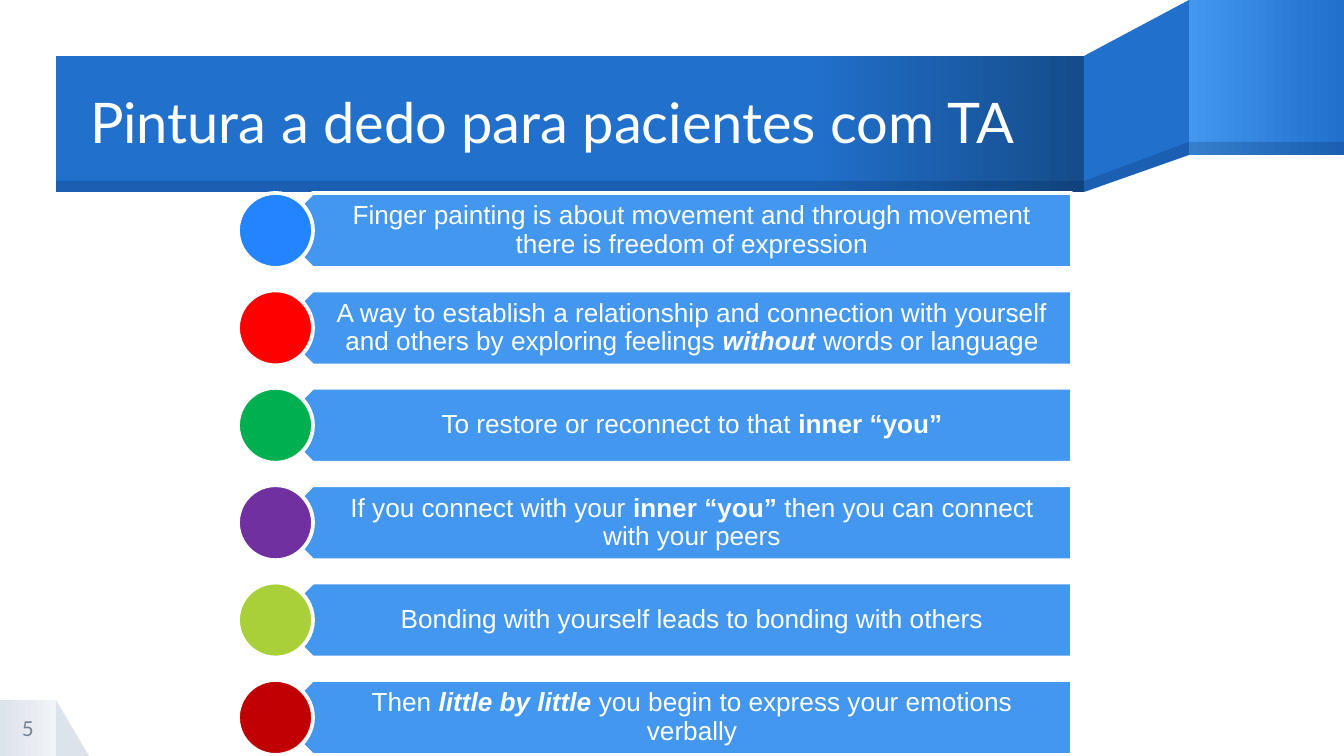
"""Build the finger painting slide: ribbon title, six colour-dotted rows, page number."""
from lxml import etree
from pptx import Presentation
from pptx import util as u
from pptx.dml.color import RGBColor
from pptx.enum import shapes, text
from pptx.oxml.ns import qn

PX = 914400 / 134.4
KIND = shapes.MSO_SHAPE
MID, LEFT = text.PP_ALIGN.CENTER, text.PP_ALIGN.LEFT
WHITE, BLUE, SKY, SHADE = "FFFFFF", "2170CC", "4397EE", "001F46"
BOLD = {"bold": True}
BOTH = {"bold": True, "italic": True}

TITLE = "Pintura a dedo para pacientes com TA"
ROWS = [
    ("2384FF", [("Finger painting is about movement and through movement there is freedom of expression", {})]),
    ("FF0000", [("A way to establish a relationship and connection with yourself and others by exploring feelings ", {}),
                ("without", BOTH), (" words or language", {})]),
    ("00B050", [("To restore or reconnect to that ", {}), ("inner “you”", BOLD)]),
    ("7030A0", [("If you connect with your ", {}), ("inner “you” ", BOLD),
                ("then you can connect with your peers", {})]),
    ("A9D039", [("Bonding with yourself leads to bonding with others", {})]),
    ("C00000", [("Then ", {}), ("little by little ", BOTH),
                ("you begin to express your emotions verbally", {})]),
]
PANELS = [
    (KIND.RIGHT_TRIANGLE, (56, 700, 33, 56), "DDE3EB"),
    (KIND.RECTANGLE, (0, 700, 56, 56), [(0, "DDE3EB"), (1, "F0F3F7")]),
    (KIND.RECTANGLE, (1189, 0, 155, 155), [(0, SKY), (1, BLUE)]),
    (KIND.RECTANGLE, (56, 56, 1028, 136), [(0.73, BLUE), (1, "154C8A")]),
]
FOLD = [(1189, 0), (1084, 56), (1084, 192), (1189, 155)]
EDGE = [(1189, 142), (1084, 181), (1084, 192), (1189, 155)]
STRIPS = [(1189, 142, 155, 13), (56, 181, 1028, 11)]
TOP, STEP, HIGH = 193, 97.4, 75


def emu(*vals):
    return [u.Emu(round(v * PX)) for v in vals]


def tint(code):
    return RGBColor.from_string(code)


def paint(shape, fill, edge=None, alpha=None):
    shape.shadow.inherit = False
    if isinstance(fill, list):
        shape.fill.gradient()
        shape.fill.gradient_angle = 0
        for stop, (pos, code) in zip(shape.fill.gradient_stops, fill):
            stop.position, stop.color.rgb = pos, tint(code)
    else:
        shape.fill.solid()
        shape.fill.fore_color.rgb = tint(fill)
    if alpha:
        color = shape._element.spPr.find(qn("a:solidFill"))[0]
        etree.SubElement(color, qn("a:alpha")).set("val", str(alpha * 1000))
    if edge:
        shape.line.color.rgb, shape.line.width = tint(edge), u.Pt(2)
    else:
        shape.line.fill.background()
    return shape


def draw(slide, kind, box, fill, **look):
    return paint(slide.shapes.add_shape(kind, *emu(*box)), fill, **look)


def trace(slide, pts, fill, **look):
    form = slide.shapes.build_freeform(*pts[0], scale=PX)
    form.add_line_segments(pts[1:], close=True)
    return paint(form.convert_to_shape(), fill, **look)


def write(shape, runs, size, face, color, align, pads=(0, 0, 0, 0), lead=0.9):
    frame = shape.text_frame
    sides = ("margin_left", "margin_top", "margin_right", "margin_bottom")
    form = dict(zip(sides, emu(*pads)), word_wrap=True,
                auto_size=text.MSO_AUTO_SIZE.NONE,
                vertical_anchor=text.MSO_ANCHOR.MIDDLE)
    for key, val in form.items():
        setattr(frame, key, val)
    para = frame.paragraphs[0]
    para.alignment, para.line_spacing = align, lead
    for words, style in runs:
        run = para.add_run()
        run.text = words
        for key, val in {"size": u.Pt(size), "name": face, **style}.items():
            setattr(run.font, key, val)
        run.font.color.rgb = tint(color)


def main():
    prs = Presentation()
    prs.slide_width, prs.slide_height = emu(1344, 756)
    slide = prs.slides.add_slide(prs.slide_layouts[5])

    for kind, box, fill in PANELS:
        draw(slide, kind, box, fill)
    trace(slide, FOLD, BLUE)
    trace(slide, EDGE, SHADE, alpha=20)
    for box in STRIPS:
        draw(slide, KIND.RECTANGLE, box, SHADE, alpha=20)

    title = slide.shapes.title
    title.left, title.top, title.width, title.height = emu(90, 58, 993, 135)
    write(title, [(TITLE, {})], 30, "Lato", WHITE, LEFT)
    slide.shapes._spTree.append(title._element)

    for i, (color, runs) in enumerate(ROWS):
        y = TOP + i * STEP
        plate = draw(slide, KIND.PENTAGON, (275, y, 797, HIGH), SKY, edge=WHITE)
        plate.rotation = 180
        label = slide.shapes.add_textbox(*emu(294, y, 778, HIGH))
        write(label, runs, 14, "Arial", WHITE, MID, pads=(33, 8, 15, 8))
        draw(slide, KIND.OVAL, (238, y, HIGH, HIGH), color, edge=WHITE)

    page = slide.shapes.add_textbox(*emu(0, 700, 56, 56))
    write(page, [("5", {})], 11, "Lato", "748394", MID, lead=1.0)
    prs.save("out.pptx")


if __name__ == "__main__":
    main()
